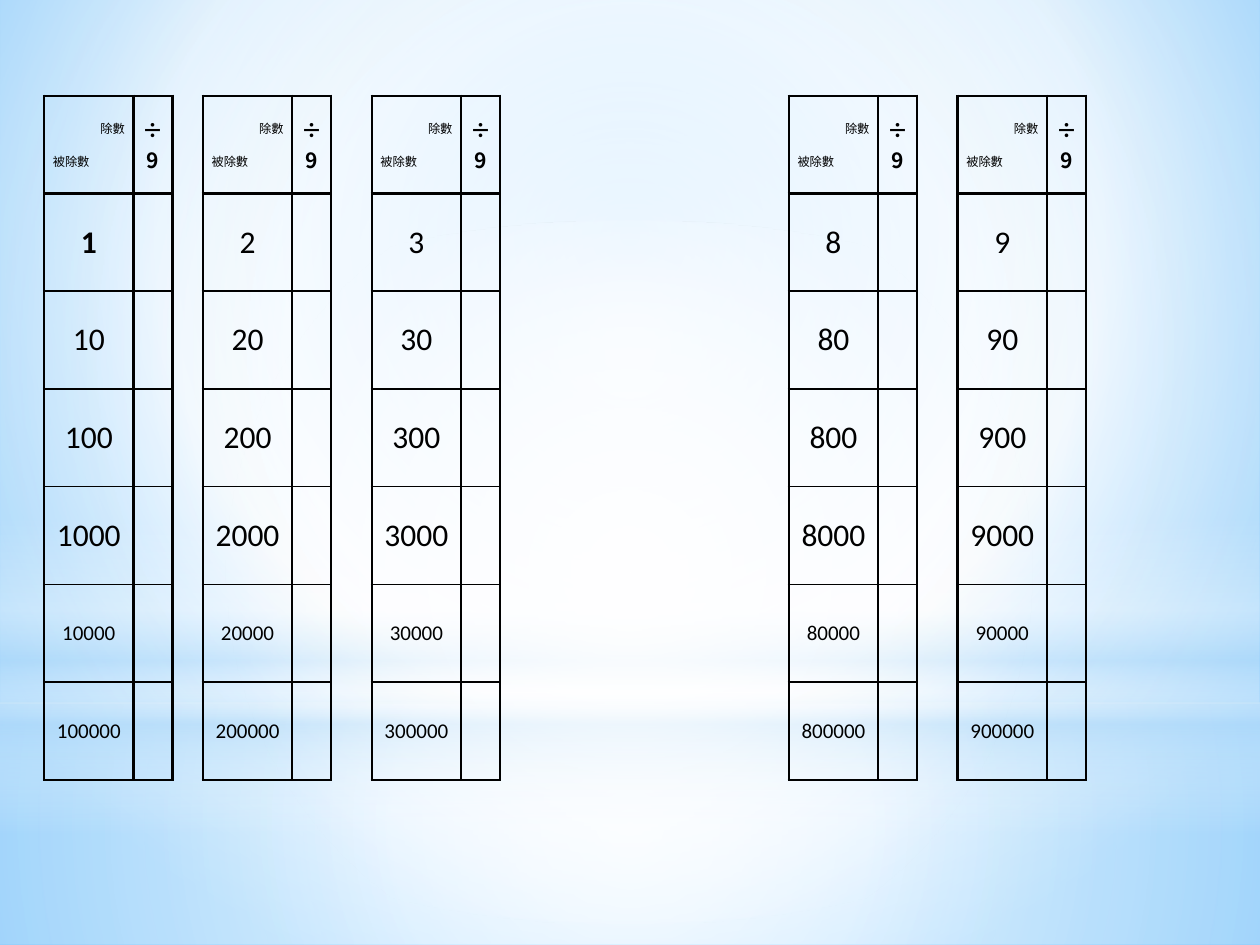
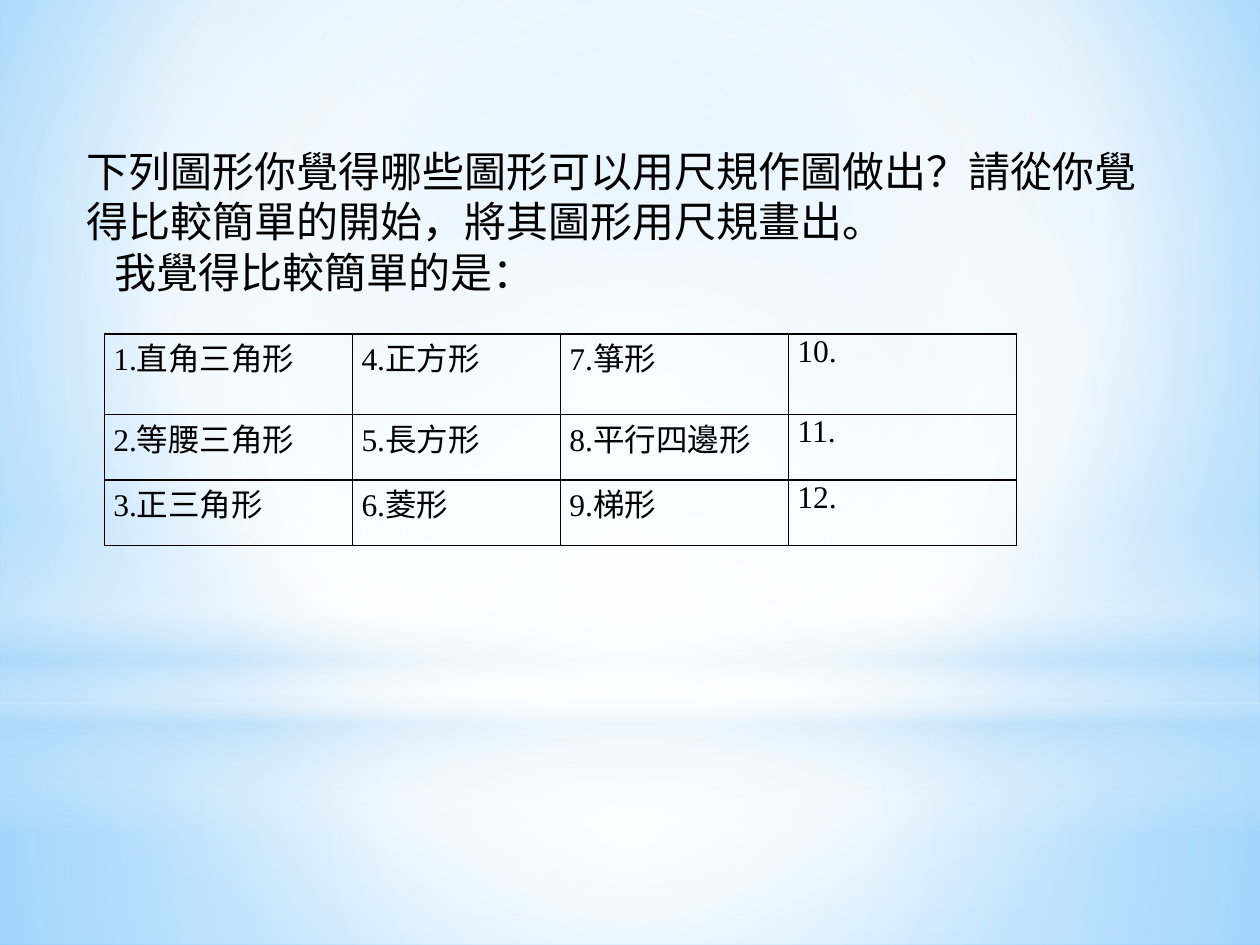
from lxml.etree import SubElement
from pptx import Presentation
from pptx.dml.color import RGBColor
from pptx.enum.shapes import MSO_SHAPE as Shape
from pptx.enum.text import MSO_ANCHOR as Anchor, MSO_AUTO_SIZE as AutoSize, PP_ALIGN as Align
from pptx.oxml.ns import qn
from pptx.util import Inches, Pt

BLACK = RGBColor(0x00, 0x00, 0x00)
WHITE = RGBColor(0xFF, 0xFF, 0xFF)
MIST = RGBColor(0xB4, 0xDC, 0xFA)
SKY = RGBColor(0x9E, 0xD5, 0xFF)
AZURE = RGBColor(0x5B, 0xB9, 0xFF)

SANS, SERIF, CHINESE = "Calibri", "Times New Roman", "Noto Sans CJK TC"
CENTRE = (50, 50, 50, 50)
BACKGROUND_STOPS = [(0, SKY, 100), (60, WHITE, 100), (100, AZURE, 100)]

# preset, box, (position, colour, opacity) stops, focus (None for a vertical gradient)
GLOWS = [
    (Shape.RECTANGLE, (0, 5.58, 10, 1.92),
     [(0, WHITE, 91), (37, WHITE, 76), (100, MIST, 79)], CENTRE),
    (Shape.RECTANGLE, (0, 0, 10, 5.58),
     [(0, WHITE, 89), (48, WHITE, 62), (100, MIST, 79)], CENTRE),
    (Shape.RECTANGLE, (0, 4.12, 10, 2.5),
     [(0, WHITE, 0), (29, WHITE, 30), (45, MIST, 40),
      (55, WHITE, 26), (65, MIST, 60), (100, WHITE, 0)], None),
    (Shape.OVAL, (0, 1.75, 10, 5.58), [(0, WHITE, 100), (56, WHITE, 0)], CENTRE),
]

DIVISION_LEFTS = {1: 0.35, 2: 1.61, 3: 2.95, 8: 6.26, 9: 7.6}
DIVISION_TOP, DIVISION_HEIGHT = 0.76, 5.43
DIVISION_COLUMNS = (0.71, 0.31)
DIVISION_ROWS = 7

FIGURES = [
    ["1.直角三角形", "4.正方形", "7.箏形", "10."],
    ["2.等腰三角形", "5.長方形", "8.平行四邊形", "11."],
    ["3.正三角形", "6.菱形", "9.梯形", "12."],
]
FIGURE_COLUMNS = (1.97, 1.65, 1.81, 1.81)
FIGURE_ROWS = (0.64, 0.52, 0.52)


def set_all(target, values):
    for name, value in values.items():
        setattr(target, name, value)


def set_gradient(fill, owner, stops, focus):
    """Replace the gradient of owner; focus is the left, top, right, bottom inset in percent."""
    fill.gradient()
    gradient = next(owner.iter(qn("a:gradFill")))
    gradient.clear()
    gradient.set("rotWithShape", "1")
    stop_list = SubElement(gradient, qn("a:gsLst"))
    for position, colour, opacity in stops:
        stop = SubElement(stop_list, qn("a:gs"), pos=str(position * 1000))
        paint = SubElement(stop, qn("a:srgbClr"), val=str(colour))
        if opacity < 100:
            SubElement(paint, qn("a:alpha"), val=str(opacity * 1000))
    if focus:
        circle = SubElement(gradient, qn("a:path"), {"path": "circle"})
        insets = {side: str(inset * 1000) for side, inset in zip("ltrb", focus)}
        SubElement(circle, qn("a:fillToRect"), insets)
    else:
        SubElement(gradient, qn("a:lin"), ang="5400000", scaled="0")


def build_backdrop(master, slide):
    """Draw the glows on the slide and move them to the master, so all slides share them."""
    fill = master.background.fill
    set_gradient(fill, master.element.find(".//" + qn("p:bgPr")),
                 BACKGROUND_STOPS, (20, 10, 20, 60))
    for preset, box, stops, focus in GLOWS:
        glow = slide.shapes.add_shape(preset, *map(Inches, box))
        glow.shadow.inherit = False
        glow.line.fill.background()
        set_gradient(glow.fill, glow.element, stops, focus)
        master.shapes.element.append(glow.element)


def write(paragraph, text, size, font=SANS, bold=False, **layout):
    set_all(paragraph, layout)
    run = paragraph.add_run()
    run.text = text
    set_all(run.font, {"name": font, "size": Pt(size), "bold": bold})
    run.font.color.rgb = BLACK
    SubElement(run._r.get_or_add_rPr(), qn("a:ea"), typeface=CHINESE)


def set_borders(cell, left, right, top, bottom):
    properties = cell._tc.get_or_add_tcPr()
    for side, width in zip("LRTB", (left, right, top, bottom)):
        line = SubElement(properties, qn("a:ln" + side), w=str(Pt(width)))
        fill = SubElement(line, qn("a:solidFill"))
        SubElement(fill, qn("a:srgbClr"), val=str(BLACK))


def add_grid(slide, box, row_count, column_widths):
    """Add a plain table whose rows share the height of the box equally."""
    table = slide.shapes.add_table(row_count, len(column_widths), *map(Inches, box)).table
    set_all(table, {"first_row": False, "horz_banding": False})
    for column, width in zip(table.columns, column_widths):
        column.width = Inches(width)
    return table


def format_cell(cell, borders, anchor):
    set_borders(cell, *borders)
    cell.fill.background()
    set_all(cell, {"margin_left": Inches(0.07), "margin_right": Inches(0.07),
                   "margin_top": 0, "margin_bottom": 0, "vertical_anchor": anchor})


def add_division_table(slide, left, digit):
    """Add a table that divides the digit and its multiples of ten by nine."""
    box = (left, DIVISION_TOP, sum(DIVISION_COLUMNS), DIVISION_HEIGHT)
    table = add_grid(slide, box, DIVISION_ROWS, DIVISION_COLUMNS)
    rules = [1.5, 2.25] + [1] * (DIVISION_ROWS - 2) + [1.5]
    for row, (top, bottom) in enumerate(zip(rules, rules[1:])):
        for column in range(len(DIVISION_COLUMNS)):
            format_cell(table.cell(row, column), (1.5, 1.5, top, bottom), Anchor.MIDDLE)

    gap = {"space_before": Pt(9)}
    centred = {"alignment": Align.CENTER, **gap}
    corner = table.cell(0, 0).text_frame
    write(corner.paragraphs[0], "除數", 7, alignment=Align.RIGHT, **gap)
    write(corner.add_paragraph(), "被除數", 7, **gap)
    write(table.cell(0, 1).text_frame.paragraphs[0], "÷9", 12, CHINESE, True, **centred)
    for row in range(1, DIVISION_ROWS):
        dividend = digit * 10 ** (row - 1)
        write(table.cell(row, 0).text_frame.paragraphs[0], str(dividend),
              18 if dividend < 10000 else 12, bold=dividend == 1, **centred)


def add_figure_table(slide, left, top):
    box = (left, top, sum(FIGURE_COLUMNS), sum(FIGURE_ROWS))
    table = add_grid(slide, box, len(FIGURES), FIGURE_COLUMNS)
    for row, names, height in zip(table.rows, FIGURES, FIGURE_ROWS):
        row.height = Inches(height)
        for cell, name in zip(row.cells, names):
            format_cell(cell, (1, 1, 1, 1), Anchor.TOP)
            write(cell.text_frame.paragraphs[0], name, 18, SERIF)


def add_question(slide, box):
    frame = slide.shapes.add_textbox(*map(Inches, box)).text_frame
    set_all(frame, {"word_wrap": True, "vertical_anchor": Anchor.MIDDLE,
                    "auto_size": AutoSize.SHAPE_TO_FIT_TEXT})
    write(frame.paragraphs[0],
          "下列圖形你覺得哪些圖形可以用尺規作圖做出？請從你覺得比較簡單的開始，將其圖形用尺規畫出。",
          24, SERIF)
    answer = frame.add_paragraph()
    write(answer, "我覺得比較簡單的是：", 24, SERIF)
    answer._p.get_or_add_pPr().set("marL", str(Inches(0.22)))


def build_division_slide(slide):
    for digit, left in DIVISION_LEFTS.items():
        add_division_table(slide, left, digit)


def build_figure_slide(slide):
    add_figure_table(slide, 0.83, 2.65)
    add_question(slide, (0.59, 1.1, 8.66, 1.31))


def main():
    presentation = Presentation()
    set_all(presentation, {"slide_width": Inches(10), "slide_height": Inches(7.5)})
    blank = presentation.slide_layouts[6]
    division_slide, figure_slide = (presentation.slides.add_slide(blank) for _ in range(2))
    build_backdrop(presentation.slide_master, division_slide)
    build_division_slide(division_slide)
    build_figure_slide(figure_slide)
    presentation.save("out.pptx")


if __name__ == "__main__":
    main()
